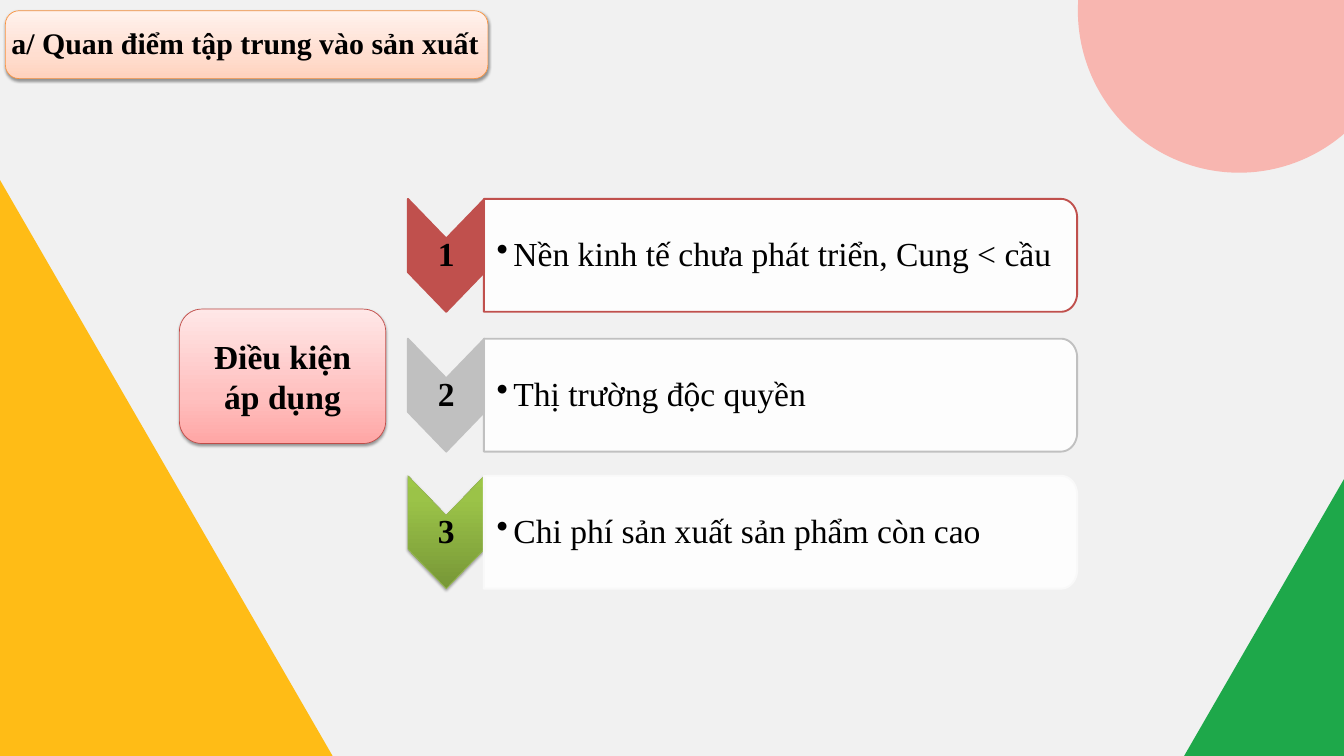
from math import cos, pi, sin

from lxml.etree import SubElement
from pptx import Presentation
from pptx.dml.color import RGBColor as RGB
from pptx.enum.shapes import MSO_SHAPE as Shape
from pptx.enum.text import MSO_ANCHOR as Anchor, MSO_AUTO_SIZE as Fit, PP_ALIGN as Align
from pptx.oxml.ns import qn
from pptx.util import Inches, Pt

FONT = "Times New Roman"
BLACK = RGB(0, 0, 0)
WHITE = RGB(255, 255, 255)
PAPER = RGB(0xF1, 0xF1, 0xF1)
YELLOW = RGB(0xFF, 0xBC, 0x16)
GREEN = RGB(0x1E, 0xA8, 0x4A)
PINK = RGB(0xF8, 0xB6, 0xB0)
ORANGE = RGB(0xF6, 0x92, 0x40)
BRICK = RGB(0xBF, 0x4C, 0x48)
RED = RGB(0xC0, 0x50, 0x4D)
GREY = RGB(0xC0, 0xC0, 0xC0)
LIME = RGB(0x98, 0xB9, 0x55)
PALE = RGB(0xF9, 0xF9, 0xF9)
PEACH = [(0, RGB(0xFF, 0xD2, 0xBD)), (35, RGB(0xFF, 0xDE, 0xD0)), (100, RGB(0xFF, 0xF2, 0xED))]
ROSE = [(0, RGB(0xFF, 0xA6, 0xA5)), (35, RGB(0xFF, 0xC0, 0xBF)), (100, RGB(0xFF, 0xE7, 0xE7))]
LEAF = [(0, RGB(0x77, 0x97, 0x37)), (80, RGB(0x9B, 0xC3, 0x48)), (100, RGB(0x9D, 0xC7, 0x46))]

ARROW_X, CARD_X = 6.07, 7.2
ARROW_W, CARD_W, ROW_H = 1.14, 8.83, 1.68

# top, text, arrow fill, arrow line, card line
ROWS = [
    (2.96, "Nền kinh tế chưa phát triển, Cung < cầu", RED, RED, RED),
    (5.04, "Thị trường độc quyền", GREY, GREY, GREY),
    (7.08, "Chi phí sản xuất sản phẩm còn cao", LEAF, LIME, PALE),
]


def paint(shape, fill, line=None, width=2):
    """Fill with a colour, or with gradient stops that run from the bottom up."""
    shape.shadow.inherit = False
    if isinstance(fill, list):
        shape.fill.gradient()
        shape.fill.gradient_angle = 90
        stops = shape.element.spPr.find(qn("a:gradFill")).find(qn("a:gsLst"))
        stops.clear()
        for pos, tint in fill:
            stop = SubElement(stops, qn("a:gs"), pos=str(pos * 1000))
            SubElement(stop, qn("a:srgbClr"), val=str(tint))
    else:
        shape.fill.solid()
        shape.fill.fore_color.rgb = fill
    if line is None:
        shape.line.fill.background()
    else:
        shape.line.color.rgb = line
        shape.line.width = Pt(width)


def shade(shape, alpha):
    """Add a soft shadow below the shape; alpha is in percent."""
    effects = shape.element.spPr.find(qn("a:effectLst"))
    drop = SubElement(effects, qn("a:outerShdw"), blurRad=str(Pt(3.1)),
                      dist=str(Pt(1.6)), dir="5400000", rotWithShape="0")
    tint = SubElement(drop, qn("a:srgbClr"), val=str(BLACK))
    SubElement(tint, qn("a:alpha"), val=str(alpha * 1000))


def fade(shape, alpha):
    tint = shape.element.spPr.find(qn("a:solidFill")).find(qn("a:srgbClr"))
    SubElement(tint, qn("a:alpha"), val=str(alpha * 1000))


def write(shape, text, size=36, bold=True, align=Align.CENTER,
          pad=(0.1, 0.05, 0.1, 0.05), spacing=0.9, bullet=False):
    """Set one paragraph; pad is left, top, right, bottom in inches."""
    frame = shape.text_frame
    frame.word_wrap = True
    frame.auto_size = Fit.NONE
    frame.vertical_anchor = Anchor.MIDDLE
    (frame.margin_left, frame.margin_top,
     frame.margin_right, frame.margin_bottom) = map(Inches, pad)
    para = frame.paragraphs[0]
    para.text = text
    para.alignment = align
    para.line_spacing = spacing
    if bullet:
        props = para._p.get_or_add_pPr()
        props.set("marL", str(Inches(0.25)))
        props.set("indent", str(Inches(-0.25)))
        SubElement(props, qn("a:buChar"), char="•")
    font = para.font
    font.name, font.size, font.bold = FONT, Pt(size), bold
    font.color.rgb = BLACK


def add_shape(slide, kind, *box):
    return slide.shapes.add_shape(kind, *map(Inches, box))


def add_outline(slide, points):
    first, *rest = [(Inches(x), Inches(y)) for x, y in points]
    builder = slide.shapes.build_freeform(*first)
    builder.add_line_segments(rest, close=True)
    return builder.convert_to_shape()


def add_arrow(slide, top, number, fill, line):
    mid, right = ARROW_X + ARROW_W / 2, ARROW_X + ARROW_W
    notch = 0.59
    low = top + ROW_H
    arrow = add_outline(slide, [
        (ARROW_X, top), (mid, top + notch), (right, top),
        (right, low - notch), (mid, low), (ARROW_X, low - notch)])
    if isinstance(fill, list):
        paint(arrow, fill, line, 0.75)
        shade(arrow, 35)
    else:
        paint(arrow, fill, line)
    write(arrow, str(number), pad=(0.02, 0.58, 0.02, 0.58))


def add_card(slide, top, text, line):
    """Add a white card with its two right corners rounded."""
    right, low = CARD_X + CARD_W, top + ROW_H
    wide, high, steps = 0.24, 0.28, 12
    turns = [pi / 2 * i / steps for i in range(steps + 1)]
    upper = [(right - wide + wide * sin(t), top + high - high * cos(t)) for t in turns]
    lower = [(x, top + low - y) for x, y in reversed(upper)]
    card = add_outline(slide, [(CARD_X, top), *upper, *lower, (CARD_X, low)])
    paint(card, WHITE, line)
    fade(card, 90)
    write(card, text, bold=False, align=Align.LEFT,
          pad=(0.19, 0.07, 0.07, 0.07), bullet=True)


def add_title(slide, text):
    box = 0.08, 0.16, 7.18, 1.01
    plate = add_shape(slide, Shape.ROUNDED_RECTANGLE, *box)
    plate.adjustments[0] = 0.2
    paint(plate, PEACH, ORANGE, 0.75)
    shade(plate, 38)
    title = slide.shapes.title
    title.left, title.top, title.width, title.height = map(Inches, box)
    write(title, text, size=32, align=Align.LEFT, pad=(0.09,) * 4)
    plate.element.addnext(title.element)


def add_decor(slide):
    paint(add_shape(slide, Shape.ISOSCELES_TRIANGLE, -4.96, 2.67, 9.91, 8.58), YELLOW)
    paint(add_shape(slide, Shape.ISOSCELES_TRIANGLE, 17.43, 7.13, 5.14, 4.45), GREEN)
    paint(add_shape(slide, Shape.OVAL, 16.04, -2.25, 4.8, 4.82), PINK)


def main():
    deck = Presentation()
    deck.slide_width, deck.slide_height = Inches(20), Inches(11.25)
    slide = deck.slides.add_slide(deck.slide_layouts[5])
    slide.background.fill.solid()
    slide.background.fill.fore_color.rgb = PAPER
    add_decor(slide)
    add_title(slide, "a/ Quan điểm tập trung vào sản xuất")
    label = add_shape(slide, Shape.ROUNDED_RECTANGLE, 2.67, 4.6, 3.07, 2)
    paint(label, ROSE, BRICK, 0.75)
    shade(label, 38)
    write(label, "Điều kiện áp dụng", spacing=1.0)
    for number, (top, text, fill, edge, frame) in enumerate(ROWS, 1):
        add_arrow(slide, top, number, fill, edge)
        add_card(slide, top, text, frame)
    deck.save("out.pptx")


if __name__ == "__main__":
    main()
